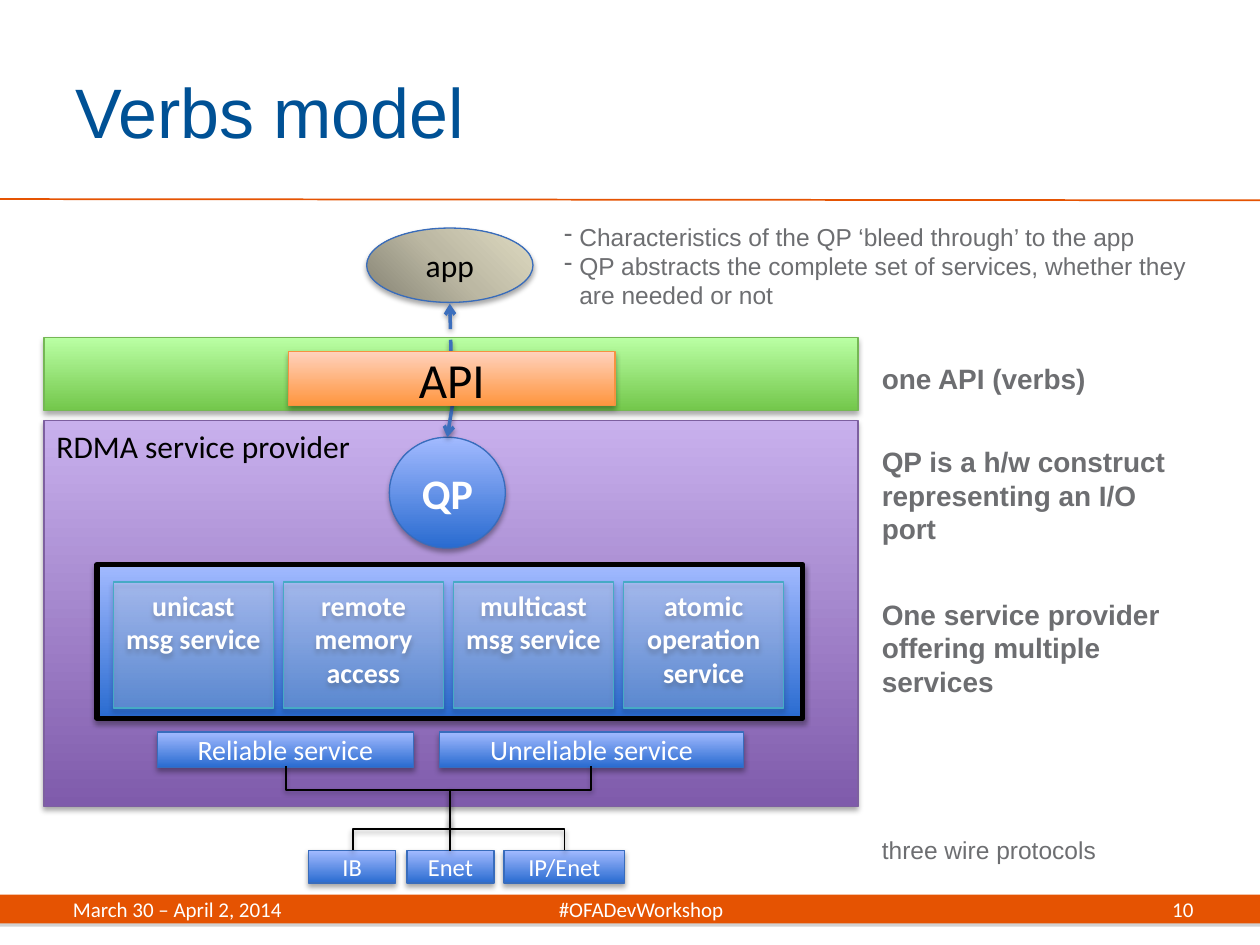
from pptx import Presentation
from pptx.dml.color import RGBColor
from pptx.enum.dml import MSO_LINE
from pptx.enum.shapes import MSO_CONNECTOR, MSO_SHAPE
from pptx.enum.text import MSO_ANCHOR, PP_ALIGN
from pptx.oxml.ns import qn
from pptx.util import Inches, Pt
from lxml.etree import SubElement
from copy import deepcopy

WHITE = RGBColor(0xFF, 0xFF, 0xFF)
BLACK = RGBColor(0, 0, 0)
GREY = RGBColor(0x6D, 0x6E, 0x71)
NAVY = RGBColor(0x00, 0x51, 0x95)
RUST = RGBColor(0xE5, 0x53, 0x02)
EDGE = RGBColor(0x38, 0x6C, 0xBC)
ARROW = RGBColor(0x3C, 0x6F, 0xBD)
TEAL = RGBColor(0x46, 0xAA, 0xC5)
LEAF = RGBColor(0x75, 0xB7, 0x55)
PLUM = RGBColor(0x7D, 0x60, 0xA0)
AMBER = RGBColor(0xF6, 0x92, 0x40)
# Gradients run from the bottom up
BLUES = [RGBColor(0x29, 0x6B, 0xD0), RGBColor(0xA2, 0xBA, 0xFF)]
GREENS = [RGBColor(0x73, 0xC7, 0x4B), RGBColor(0xBA, 0xFF, 0xA4)]
PURPLES = [RGBColor(0x7F, 0x5B, 0xAB), RGBColor(0xC8, 0xB0, 0xED)]
ORANGES = [RGBColor(0xFF, 0x95, 0x3E), RGBColor(0xFF, 0xD2, 0xBD)]
TANS = [RGBColor(0x84, 0x82, 0x73), RGBColor(0xBC, 0xB8, 0xA3),
        RGBColor(0xDF, 0xDB, 0xC2)]


def add(node, tag, **attrs):
    return SubElement(node, qn(tag), {k: str(v) for k, v in attrs.items()})


class Board:
    """Holds the slide and its style."""

    def __init__(self, slide):
        self.slide = slide
        self.sans, self.body = "Arial", "Calibri"

    def shade(self, item, color="000000", alpha=35, blur=3.1, dist=1.8):
        props = item.element.spPr
        for old in props.findall(qn("a:effectLst")):
            props.remove(old)
        glow = add(add(props, "a:effectLst"), "a:outerShdw", blurRad=Pt(blur),
                   dist=Pt(dist), dir=5400000, rotWithShape=0)
        add(add(glow, "a:srgbClr", val=color), "a:alpha", val=alpha * 1000)

    def label(self, frame, text, size, color, name, bold=False,
              align=PP_ALIGN.LEFT, dash=False, tab=None):
        frame.word_wrap = True
        for i, line in enumerate(text if isinstance(text, list) else [text]):
            para = frame.add_paragraph() if i else frame.paragraphs[0]
            para.text = line
            para.alignment = align
            props = para._p.get_or_add_pPr()
            if dash:
                props.set("marL", str(Inches(0.12)))
                props.set("indent", str(-Inches(0.12)))
                add(props, "a:buChar", char="-")
            if tab:
                add(add(props, "a:tabLst"), "a:tab", pos=Inches(tab), algn="ctr")
            font = para.font
            font.name, font.size, font.bold = name, Pt(size), bold
            font.color.rgb = color

    def text(self, x, y, w, h, text, size, color=GREY, name=None,
             anchor=MSO_ANCHOR.TOP, **style):
        box = self.slide.shapes.add_textbox(
            Inches(x), Inches(y), Inches(w), Inches(h))
        box.text_frame.vertical_anchor = anchor
        self.label(box.text_frame, text, size, color, name or self.sans, **style)

    def shape(self, x, y, w, h, fill, edge=EDGE, text=None, size=14,
              color=WHITE, kind=MSO_SHAPE.RECTANGLE, angle=90, width=0.75,
              anchor=MSO_ANCHOR.MIDDLE, align=PP_ALIGN.CENTER, bold=False):
        item = self.slide.shapes.add_shape(
            kind, Inches(x), Inches(y), Inches(w), Inches(h))
        if isinstance(fill, list):
            self.blend(item, fill, angle)
        else:
            item.fill.solid()
            item.fill.fore_color.rgb = fill
        if edge is None:
            item.line.fill.background()
        else:
            item.line.color.rgb = edge
            item.line.width = Pt(width)
        self.shade(item)
        if text:
            item.text_frame.vertical_anchor = anchor
            self.label(item.text_frame, text, size, color, self.body, bold, align)
        return item

    def blend(self, item, colors, angle):
        item.fill.gradient()
        item.fill.gradient_angle = angle
        stops = next(item.element.spPr.iter(qn("a:gsLst")))
        for _ in colors[2:]:
            stops.insert(1, deepcopy(stops[0]))
        for i, (stop, color) in enumerate(zip(item.fill.gradient_stops, colors)):
            stop.color.rgb = color
            stop.position = i / (len(colors) - 1)

    def line(self, x1, y1, x2, y2, color=BLACK, width=1, end=None, dash=None,
             kind=MSO_CONNECTOR.STRAIGHT, shade=True):
        link = self.slide.shapes.add_connector(
            kind, Inches(x1), Inches(y1), Inches(x2), Inches(y2))
        link.line.color.rgb = color
        link.line.width = Pt(width)
        if dash:
            link.line.dash_style = dash
        if end:
            add(link.element.spPr.find(qn("a:ln")), end, type="arrow")
        if shade:
            self.shade(link, alpha=38, dist=1.6)
        else:
            add(link.element.spPr, "a:effectLst")
        return link

    def bend(self, x1, y1, x2, y2, mid=0.5):
        """Elbow that leaves downward: a sideways elbow, turned."""
        x, y = (x1 + x2) / 2, (y1 + y2) / 2
        wide, high = (y2 - y1) / 2, abs(x2 - x1) / 2
        right = x2 > x1
        if right:
            wide = -wide
        link = self.line(x - wide, y - high, x + wide, y + high,
                         kind=MSO_CONNECTOR.ELBOW)
        props = link.element.spPr
        props.find(qn("a:xfrm")).set("rot", str((270 if right else 90) * 60000))
        guides = next(props.iter(qn("a:avLst")))
        add(guides, "a:gd", name="adj1", fmla=f"val {round(mid * 100000)}")


def main():
    deck = Presentation()
    deck.slide_width, deck.slide_height = Inches(10), Inches(7.5)
    board = Board(deck.slides.add_slide(deck.slide_layouts[6]))
    mid = MSO_ANCHOR.MIDDLE

    # Footer band, rule and title
    band = board.shape(0, 7.1, 10, 0.23, RUST, None)
    board.shade(band, "808080", blur=0)
    board.line(0, 1.58, 10, 1.59, RUST, shade=False)
    board.text(0.5, 0.25, 8.17, 1.25, "Verbs model", 40, NAVY, anchor=mid)

    # API layer and provider
    board.shape(0.35, 2.68, 6.46, 0.58, GREENS, LEAF)
    board.shape(0.35, 3.34, 6.46, 3.06, PURPLES, PLUM, "RDMA service provider",
                18, BLACK, anchor=MSO_ANCHOR.TOP, align=PP_ALIGN.LEFT)

    # Wire protocols and service grades
    for x, w, name in [(2.45, 0.69, "IB"), (3.23, 0.69, "Enet"),
                       (4, 0.96, "IP/Enet")]:
        board.shape(x, 6.75, w, 0.26, BLUES, text=name)
    for x, w, name in [(1.25, 2.03, "Reliable service"),
                       (3.49, 2.41, "Unreliable service")]:
        board.shape(x, 5.81, w, 0.28, BLUES, text=name, size=16)

    # Services
    board.shape(0.77, 4.48, 5.6, 1.22, BLUES, BLACK, width=3)
    names = ["unicast msg service", "remote memory access",
             "multicast msg service", "atomic operation service"]
    for i, name in enumerate(names):
        pane = board.shape(0.9 + 1.35 * i, 4.62, 1.27, 1, WHITE, TEAL, name, 16,
                           anchor=MSO_ANCHOR.TOP, bold=True)
        tint = pane.element.spPr.find(qn("a:solidFill"))[0]
        add(tint, "a:alpha", val=22000)

    # QP, app and API
    board.shape(3.09, 3.47, 0.92, 0.88, BLUES, text="QP", size=24,
                kind=MSO_SHAPE.OVAL, bold=True)
    board.shape(2.91, 1.81, 1.32, 0.59, TANS, text="app", size=18, color=BLACK,
                kind=MSO_SHAPE.OVAL, angle=45)
    board.line(3.59, 3.22, 3.55, 3.47, ARROW, 2, "a:tailEnd")
    board.line(3.57, 2.41, 3.59, 3.22, ARROW, 2, "a:headEnd", MSO_LINE.DASH)
    board.shape(2.29, 2.79, 2.59, 0.43, ORANGES, AMBER, "API", 28, BLACK)

    # Remarks
    for y, w, h, note in [
            (2.82, 1.84, 0.37, "one API (verbs)"),
            (3.48, 2.59, 0.91, "QP is a h/w construct representing an I/O port"),
            (4.69, 2.59, 0.91, "One service provider offering multiple services")]:
        board.text(6.9, y, w, h, note, 16, bold=True)
    board.text(6.9, 6.58, 2.52, 0.34, "three wire protocols", 14)
    board.text(4.38, 1.71, 5.4, 0.81, [
        "Characteristics of the QP ‘bleed through’ to the app",
        "QP abstracts the complete set of services, whether they are needed or not",
    ], 14, dash=True)

    # Links from grades to wires
    hub, join = 3.57, 6.41
    for x in (2.27, 4.69):
        board.bend(x, 6.08, hub, join, 0.57)
    for x in (2.8, 4.48):
        board.bend(hub, join, x, 6.75)
    board.line(hub, 6.5, hub, 6.75)

    # Footer text
    board.text(8.38, 7.1, 1.19, 0.23, "10", 12, WHITE, board.body, mid,
               align=PP_ALIGN.RIGHT)
    board.text(0.48, 7.1, 9.05, 0.23, "March 30 – April 2, 2014\t#OFADevWorkshop",
               12, WHITE, board.body, mid, tab=4.51)
    deck.save("out.pptx")


if __name__ == "__main__":
    main()
